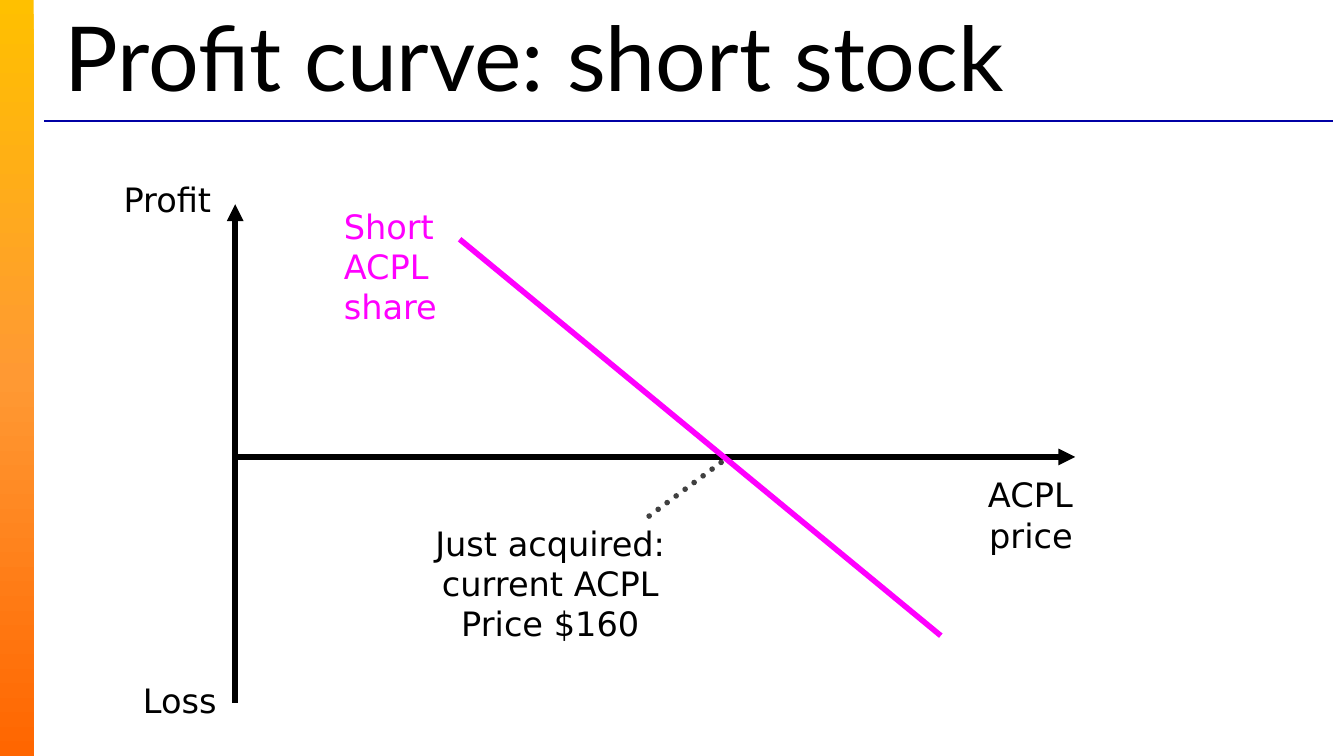
from copy import deepcopy

from lxml import etree
from pptx import Presentation
from pptx.dml.color import RGBColor
from pptx.enum.dml import MSO_LINE
from pptx.enum.shapes import MSO_CONNECTOR, MSO_SHAPE
from pptx.enum.text import MSO_ANCHOR, PP_ALIGN
from pptx.oxml.ns import qn
from pptx.util import Inches, Pt

STRAIGHT = MSO_CONNECTOR.STRAIGHT
RECTANGLE = MSO_SHAPE.RECTANGLE
DOTTED = MSO_LINE.ROUND_DOT
MIDDLE = MSO_ANCHOR.MIDDLE
LEFT, CENTER, RIGHT = PP_ALIGN.LEFT, PP_ALIGN.CENTER, PP_ALIGN.RIGHT

BLACK = RGBColor(0x00, 0x00, 0x00)
GREY = RGBColor(0x40, 0x40, 0x40)
NAVY = RGBColor(0x00, 0x00, 0xA5)
MAGENTA = RGBColor(0xFF, 0x00, 0xFF)
BAND_COLORS = (
    RGBColor(0xFF, 0xC0, 0x00),
    RGBColor(0xFF, 0x99, 0x33),
    RGBColor(0xFF, 0x66, 0x00),
)
TITLE_FONT = "Lato"
LABEL_FONT = "DejaVu Sans"
PAGE_WIDTH = 10
PAGE_HEIGHT = PAGE_WIDTH * 9 / 16


def write(frame, text, font=LABEL_FONT, size=18, color=BLACK, align=LEFT):
    frame.word_wrap = True
    frame.text = text
    for para in frame.paragraphs:
        para.alignment = align
        for span in para.runs:
            span.font.name = font
            span.font.size = Pt(size)
            span.font.color.rgb = color


def add_line(page, start, end, color=BLACK, width=3, dash=None, arrow=False):
    line = page.shapes.add_connector(STRAIGHT, *map(Inches, start + end))
    line.line.color.rgb = color
    line.line.width = Pt(width)
    outline = line._element.spPr.find(qn("a:ln"))
    if dash is not None:
        line.line.dash_style = dash
        outline.set("cap", "rnd")
    if arrow:
        etree.SubElement(outline, qn("a:tailEnd"), type="triangle")
    etree.SubElement(line._element.spPr, qn("a:effectLst"))


def add_label(page, box, text, **style):
    label = page.shapes.add_textbox(*map(Inches, box))
    write(label.text_frame, text, **style)


def add_side_band(page, left, top, width, height):
    band = page.shapes.add_shape(RECTANGLE, *map(Inches, (left, top, width, height)))
    band.shadow.inherit = False
    band.line.fill.background()
    band.fill.gradient()
    band.fill.gradient_angle = 270
    stop_list = band._element.spPr.find(qn("a:gradFill")).find(qn("a:gsLst"))
    stop_list.append(deepcopy(stop_list[-1]))
    for index, (stop, color) in enumerate(zip(band.fill.gradient_stops, BAND_COLORS)):
        stop.position = index / 2
        stop.color.rgb = color


def add_header(page, left, top, width, height):
    title = page.shapes.title
    title.left, title.top = Inches(left), Inches(top)
    title.width, title.height = Inches(width), Inches(height)
    title.text_frame.vertical_anchor = MIDDLE
    write(title.text_frame, "Profit curve: short stock", font=TITLE_FONT, size=48)
    rule = top + height + 0.22
    add_line(page, (left - 0.05, rule), (left + width - 0.04, rule), NAVY, 0.75)


def add_profit_chart(page, left, top, width, height):
    def at(x, y):
        return left + x, top + y

    zero = 1.88
    break_even = at(3.67, zero)
    add_line(page, at(0, height), at(0, 0), arrow=True)
    add_line(page, at(0, zero), at(width, zero), arrow=True)
    add_label(page, at(5.25, 1.96) + (1.08, 0.71), "ACPL price", align=RIGHT)
    add_line(page, at(1.67, 0.26), at(5.25, 3.21), MAGENTA)
    add_label(page, at(0.71, -0.04) + (1.5, 1.01), "Short\nACPL share", color=MAGENTA)
    add_line(page, at(3.08, 2.32), break_even, GREY, dash=DOTTED)
    add_label(page, at(1.26, 2.32) + (2.17, 1.01),
              "Just acquired: current ACPL Price $160", align=CENTER)
    add_label(page, at(-1.25, -0.24) + (1.17, 0.4), "Profit", align=RIGHT)
    add_label(page, at(-1.21, height - 0.22) + (1.17, 0.4), "Loss", align=RIGHT)


def main():
    deck = Presentation()
    deck.slide_width, deck.slide_height = Inches(PAGE_WIDTH), Inches(PAGE_HEIGHT)
    page = deck.slides.add_slide(deck.slide_layouts[5])
    add_side_band(page, 0, 0, 0.25, PAGE_HEIGHT)
    add_header(page, 0.38, 0.15, 9.58, 0.53)
    add_profit_chart(page, 1.75, 1.52, 6.25, 3.71)
    deck.save("out.pptx")


if __name__ == "__main__":
    main()
